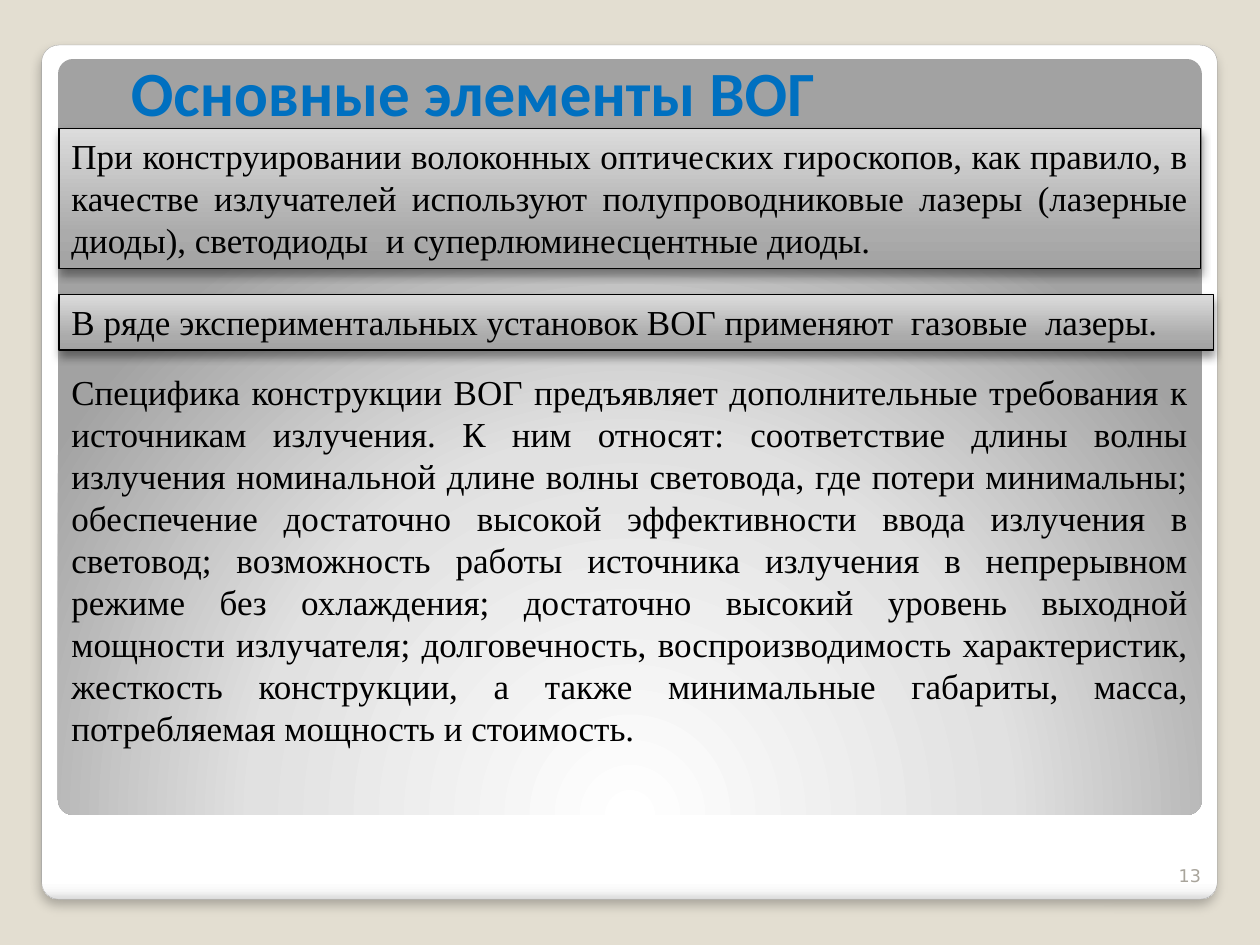
from dataclasses import dataclass

from lxml import etree
from pptx import Presentation
from pptx.dml.color import RGBColor
from pptx.enum.shapes import MSO_SHAPE
from pptx.enum.text import MSO_ANCHOR, MSO_AUTO_SIZE, PP_ALIGN
from pptx.oxml import parse_xml
from pptx.oxml.ns import qn
from pptx.util import Cm, Pt

RECT, ROUND = MSO_SHAPE.RECTANGLE, MSO_SHAPE.ROUNDED_RECTANGLE
TOP, BOTTOM = MSO_ANCHOR.TOP, MSO_ANCHOR.BOTTOM
LEFT, RIGHT, JUSTIFY = PP_ALIGN.LEFT, PP_ALIGN.RIGHT, PP_ALIGN.JUSTIFY
FIT, FIXED = MSO_AUTO_SIZE.SHAPE_TO_FIT_TEXT, MSO_AUTO_SIZE.NONE
SPACE = "http://schemas.openxmlformats.org/drawingml/2006/main"


@dataclass(frozen=True)
class Font:
    name: str
    size: float
    color: str
    bold: bool = False


@dataclass(frozen=True)
class Theme:
    back: str = "E3DED1"
    edge: str = "A4A4A4"
    ink: str = "000000"
    card: tuple = ((0, "FFFFFF"), (98, "FFFFFF"), (99, "F7F7F7"), (100, "DADADA"))
    panel: tuple = ((0, "FFFFFF"), (55, "E1E1E1"), (100, "A2A2A2"))
    box: tuple = ((0, "A2A2A2"), (25, "ABABAB"), (100, "DCDCDC"))
    title: Font = Font("Calibri", 36, "0070C0", True)
    body: Font = Font("Times New Roman", 20, "000000")
    number: Font = Font("DejaVu Sans", 10, "A8A49B")


class Page:
    def __init__(self, slide, theme):
        self.slide = slide
        self.theme = theme
        fill = slide.background.fill
        fill.solid()
        fill.fore_color.rgb = RGBColor.from_string(theme.back)

    def shape(self, kind, area, stops, angle=None, line=None, shadow=None):
        shape = self.slide.shapes.add_shape(kind, *map(Cm, area))
        if kind == ROUND:
            shape.adjustments[0] = 0.02
        self.blend(shape, stops, angle)
        if line:
            color, width = line
            shape.line.color.rgb = RGBColor.from_string(color)
            shape.line.width = Pt(width)
        else:
            shape.line.fill.background()
        shape.shadow.inherit = False
        if shadow:
            self.shade(shape, *shadow)
        return shape

    def blend(self, shape, stops, angle):
        marks = "".join(
            f'<a:gs pos="{pos * 1000}"><a:srgbClr val="{color}"/></a:gs>'
            for pos, color in stops
        )
        if angle is None:
            way = ('<a:path path="circle"><a:fillToRect l="50000" t="175000" '
                   'r="50000" b="-75000"/></a:path>')
        else:
            way = f'<a:lin ang="{angle * 60000}" scaled="0"/>'
        shape.fill.background()
        props = shape._element.spPr
        props.replace(props.find(qn("a:noFill")), parse_xml(
            f'<a:gradFill xmlns:a="{SPACE}" rotWithShape="1">'
            f"<a:gsLst>{marks}</a:gsLst>{way}</a:gradFill>"))

    def shade(self, shape, alpha, blur, dist):
        effects = shape._element.spPr.find(qn("a:effectLst"))
        outer = etree.SubElement(
            effects, qn("a:outerShdw"), blurRad=str(Pt(blur)), dist=str(Pt(dist)),
            dir="5400000", algn="t", rotWithShape="0")
        color = etree.SubElement(outer, qn("a:srgbClr"), val=self.theme.ink)
        etree.SubElement(color, qn("a:alpha"), val=str(alpha * 1000))

    def label(self, shape, words, style, align=JUSTIFY, anchor=TOP, size=FIT):
        frame = shape.text_frame
        frame.word_wrap = True
        frame.auto_size = size
        frame.vertical_anchor = anchor
        para = frame.paragraphs[0]
        para.text = words
        para.alignment = align
        font = para.font
        font.name = style.name
        font.size = Pt(style.size)
        font.bold = style.bold
        font.color.rgb = RGBColor.from_string(style.color)

    def text(self, area, words, style, **layout):
        self.label(self.slide.shapes.add_textbox(*map(Cm, area)), words, style, **layout)

    def box(self, area, words):
        theme = self.theme
        shape = self.shape(RECT, area, theme.box, 270, (theme.ink, 0.75), (40, 5.2, 3))
        self.label(shape, words, theme.body)


def main():
    deck = Presentation()
    deck.slide_width, deck.slide_height = Cm(25.4), Cm(19.05)
    theme = Theme()
    page = Page(deck.slides.add_slide(deck.slide_layouts[6]), theme)
    left, width = 1.19, 23.01

    page.shape(ROUND, (0.84, 0.91, 23.7, 17.22), theme.card, 90,
               (theme.edge, 0.16), (25, 6, 4))
    page.shape(ROUND, (1.17, 1.19, 23.06, 15.24), theme.panel)
    page.text((2.39, 0.79, 21.89, 1.93), "Основные элементы ВОГ", theme.title,
              align=LEFT, anchor=BOTTOM, size=FIXED)
    page.text((23.19, 16.97, 1.27, 1.02), "13", theme.number,
              align=RIGHT, anchor=BOTTOM, size=FIXED)
    page.box((left, 2.59, width, 2.82),
             "При конструировании волоконных оптических гироскопов, как правило, "
             "в качестве излучателей используют полупроводниковые лазеры (лазерные "
             "диоды), светодиоды  и суперлюминесцентные диоды. ")
    page.text((left, 7.34, width, 7.95),
              "Специфика конструкции ВОГ предъявляет дополнительные требования к "
              "источникам излучения. К ним относят: соответствие длины волны излучения "
              "номинальной длине волны световода, где потери минимальны; обеспечение "
              "достаточно высокой эффективности ввода излучения в световод; возможность "
              "работы источника излучения в непрерывном режиме без охлаждения; "
              "достаточно высокий уровень выходной мощности излучателя; долговечность, "
              "воспроизводимость характеристик, жесткость конструкции, а также "
              "минимальные габариты, масса, потребляемая мощность и стоимость. ",
              theme.body)
    page.box((left, 5.94, 23.27, 1.12),
             "В ряде экспериментальных установок ВОГ применяют  газовые  лазеры.")
    deck.save("out.pptx")


if __name__ == "__main__":
    main()
